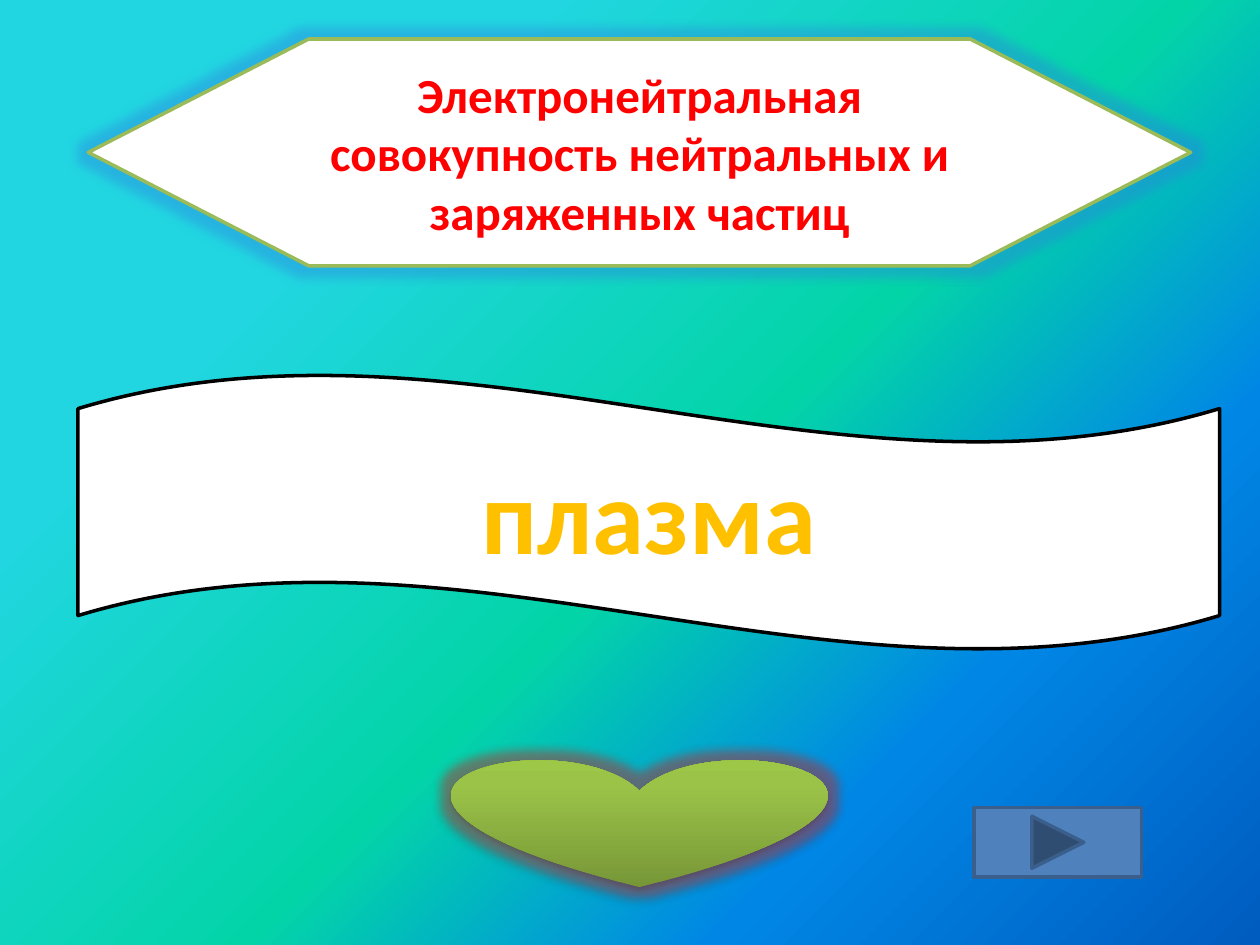
from lxml.etree import SubElement
from pptx import Presentation
from pptx.dml.color import RGBColor
from pptx.enum.shapes import MSO_SHAPE as Shape
from pptx.enum.text import MSO_ANCHOR as Anchor, PP_ALIGN as Align
from pptx.oxml.ns import qn
from pptx.util import Pt


def color(code):
    return RGBColor.from_string(code)


def set_gradient(fill, element, stops, angle):
    fill.gradient()
    fill.gradient_angle = angle
    stop_list = element.find(".//" + qn("a:gsLst"))
    stop_list.clear()
    for percent, code in stops:
        stop = SubElement(stop_list, qn("a:gs"), pos=str(percent * 1000))
        SubElement(stop, qn("a:srgbClr"), val=code)


deck = Presentation()
deck.slide_width, deck.slide_height = Pt(720), Pt(540)
slide = deck.slides.add_slide(deck.slide_layouts[6])
set_gradient(slide.background.fill, slide.element,
             [(25, "21D6E0"), (54, "03D4A8"), (75, "0087E6"), (100, "005CBF")], 315)

heart = slide.shapes.add_shape(Shape.HEART, Pt(258.5), Pt(433.5), Pt(213.8), Pt(73.4))
heart.shadow.inherit = False
set_gradient(heart.fill, heart.element,
             [(0, "779737"), (80, "9BC348"), (100, "9DC746")], 90)
heart.line.fill.background()

panels = [
    (Shape.FLOWCHART_PREPARATION, 50.4, 22.3, 630, 129.6, "FFFFFF", "9BBB59",
     "Электронейтральная совокупность нейтральных и заряженных частиц", 28, "FF0000"),
    (Shape.WAVE, 44.6, 213.8, 652.3, 157.7, "FFFFFF", "000000", "плазма", 60, "FFC000"),
    (Shape.ACTION_BUTTON_FORWARD_OR_NEXT, 556.6, 461.5, 95.8, 39.6, "4F81BD", "3A5F8C",
     "", 18, "FFFFFF"),
]
boxes = []
for kind, left, top, width, height, fill, line, text, size, text_color in panels:
    box = slide.shapes.add_shape(kind, Pt(left), Pt(top), Pt(width), Pt(height))
    box.shadow.inherit = False
    box.fill.solid()
    box.fill.fore_color.rgb = color(fill)
    box.line.color.rgb = color(line)
    box.line.width = Pt(2)
    boxes.append(box)
    if text:
        box.text_frame.vertical_anchor = Anchor.MIDDLE
        para = box.text_frame.paragraphs[0]
        para.text = text
        para.alignment = Align.CENTER
        para.font.name = "Calibri"
        para.font.size = Pt(size)
        para.font.bold = True
        para.font.color.rgb = color(text_color)

for glowing, code in [(heart, "E0302C"), (boxes[0], "2F7FE0")]:
    effects = glowing.element.spPr.find(qn("a:effectLst"))
    glow = SubElement(effects, qn("a:glow"), rad=str(Pt(11)))
    tint = SubElement(glow, qn("a:srgbClr"), val=code)
    SubElement(tint, qn("a:alpha"), val="40000")

shadow = SubElement(heart.element.spPr.find(qn("a:effectLst")), qn("a:outerShdw"),
                    blurRad=str(Pt(3.1)), dist=str(Pt(1.8)), dir="5400000", rotWithShape="0")
shade = SubElement(shadow, qn("a:srgbClr"), val="000000")
SubElement(shade, qn("a:alpha"), val="35000")

deck.save("out.pptx")
